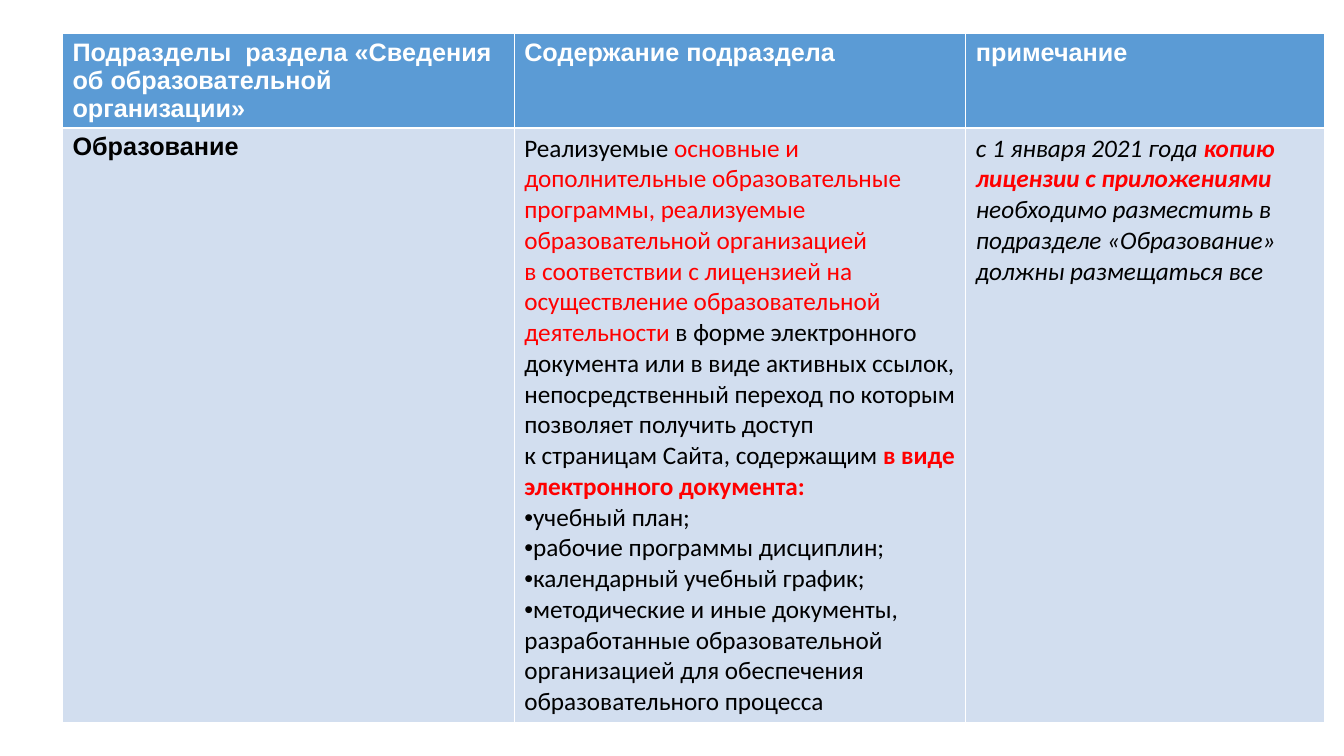
"""Slide with a table on the «Образование» section of a school website."""
from pptx import Presentation
from pptx.dml.color import RGBColor
from pptx.oxml.ns import qn
from pptx.util import Inches, Pt
from lxml.etree import SubElement

COLORS = {"white": "FFFFFF", "black": "000000", "red": "FF0000",
          "header": "5B9BD5", "body": "D2DEEF"}


def add_runs(p, runs, font, italic=False):
    for text, color, bold in runs:
        for i, line in enumerate(text.split("\n")):
            if i:
                p.add_line_break()
            r = p.add_run()
            r.text = line
            r.font.name = font
            r.font.size = Pt(18)
            r.font.bold = bold
            r.font.italic = italic
            r.font.color.rgb = RGBColor.from_string(COLORS[color])


def fill_cell(cell, fill, paragraphs, font, italic=False):
    cell.fill.solid()
    cell.fill.fore_color.rgb = RGBColor.from_string(COLORS[fill])
    tf = cell.text_frame
    for i, runs in enumerate(paragraphs):
        p = tf.add_paragraph() if i else tf.paragraphs[0]
        add_runs(p, runs, font, italic)


headers = ["Подразделы  раздела «Сведения об образовательной организации»",
           "Содержание подраздела", "примечание"]
content = [
    ("Реализуемые ", "black", False),
    ("основные и дополнительные образовательные программы, реализуемые "
     "образовательной организацией \nв соответствии с лицензией на "
     "осуществление образовательной деятельности", "red", False),
    (" в форме электронного документа или в виде активных ссылок, "
     "непосредственный переход по которым позволяет получить доступ \n"
     "к страницам Сайта, содержащим ", "black", False),
    ("в виде электронного документа:", "red", True),
]
documents = [
    "учебный план;",
    "рабочие программы дисциплин;",
    "календарный учебный график;",
    "методические и иные документы, разработанные образовательной "
    "организацией для обеспечения образовательного процесса",
]
note = [
    [("с 1 января 2021 года ", "black", False),
     ("копию лицензии с приложениями ", "red", True),
     ("необходимо разместить в подразделе «Образование»", "black", False)],
    [("должны размещаться все", "black", False)],
]

prs = Presentation()
prs.slide_width = Inches(13.33)
prs.slide_height = Inches(7.5)
s = prs.slides.add_slide(prs.slide_layouts[6])

table = s.shapes.add_table(2, 3, Inches(0.62), Inches(0.33),
                           Inches(12.52), Inches(6.83)).table
for col, width in zip(table.columns, [4.48, 4.48, 3.56]):
    col.width = Inches(width)
for row, height in zip(table.rows, [0.94, 5.89]):
    row.height = Inches(height)

for i, header in enumerate(headers):
    fill_cell(table.cell(0, i), "header", [[(header, "white", True)]], "Arial")

fill_cell(table.cell(1, 0), "body", [[("Образование", "black", True)]], "Arial")
items = [[(document, "black", False)] for document in documents]
fill_cell(table.cell(1, 1), "body", [content] + items, "Calibri")
fill_cell(table.cell(1, 2), "body", note, "Calibri", italic=True)

for p in table.cell(1, 1).text_frame.paragraphs[1:]:
    pPr = p._p.get_or_add_pPr()
    pPr.set("marL", "0")
    pPr.set("indent", "0")
    SubElement(pPr, qn("a:buFont")).set("typeface", "Arial")
    SubElement(pPr, qn("a:buChar")).set("char", "•")

prs.save("out.pptx")
